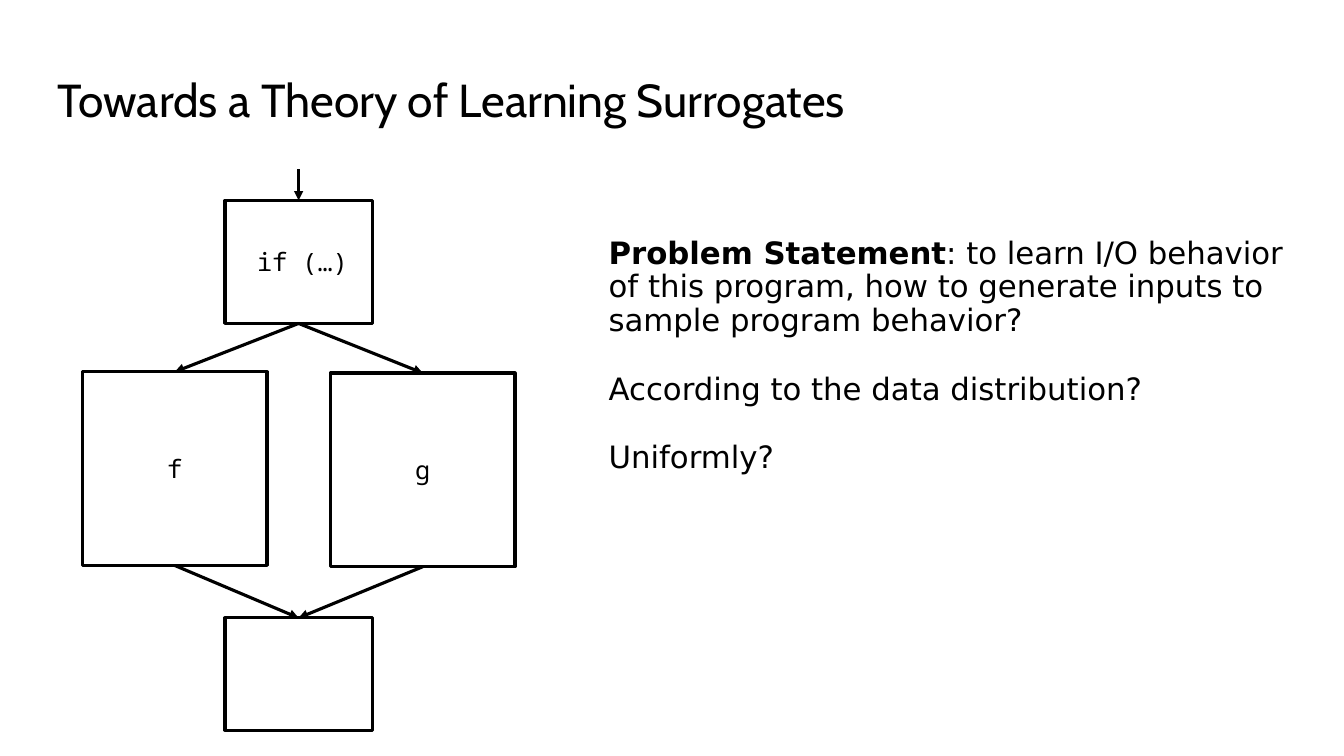
from dataclasses import dataclass

from lxml import etree
from pptx import Presentation
from pptx import util as u
from pptx.dml.color import RGBColor
from pptx.enum import shapes, text
from pptx.oxml import ns
from pptx.shapes.autoshape import Shape
from pptx.shapes.connector import Connector
from pptx.slide import Slide

BLACK = "000000"
LINE_WIDTH = 2.25
TOP, BOTTOM = 0, 2


@dataclass(frozen=True)
class Block:
    key: str
    left: float
    top: float
    width: float
    height: float
    code: str = ""
    align: text.PP_ALIGN = text.PP_ALIGN.CENTER
    indent: float = 0


@dataclass(frozen=True)
class Flow:
    source: str
    target: str


@dataclass(frozen=True)
class Run:
    words: str
    bold: bool = False


BRANCH_SIZE = (4.65, 4.88)
BLOCKS = [
    Block("condition", 5.67, 5.05, 3.71, 3.1, "if (…)", text.PP_ALIGN.LEFT, 0.81),
    Block("f", 2.08, 9.37, *BRANCH_SIZE, "f"),
    Block("g", 8.33, 9.4, *BRANCH_SIZE, "g"),
    Block("merge", 5.67, 15.57, 3.71, 2.83),
]
FLOWS = [
    Flow("condition", "f"),
    Flow("condition", "g"),
    Flow("f", "merge"),
    Flow("g", "merge"),
]
ENTRY_TOP = 4.27
PROBLEM = [
    [
        Run("Problem Statement", bold=True),
        Run(
            ": to learn I/O behavior of this program, how to generate inputs "
            "to sample program behavior?"
        ),
    ],
    [Run("According to the data distribution?")],
    [Run("Uniformly?")],
]


def rgb(value: str) -> RGBColor:
    return RGBColor.from_string(value)


def write_text(
    shape: Shape,
    paragraphs: list[list[Run]],
    *,
    font: str,
    size: float,
    color: str = BLACK,
    align: text.PP_ALIGN = text.PP_ALIGN.LEFT,
    anchor: text.MSO_ANCHOR = text.MSO_ANCHOR.TOP,
    inset_left: float = 0,
    inset_top: float = 0,
    line_points: float | None = None,
    gap_points: float = 0,
) -> None:
    frame = shape.text_frame
    frame.word_wrap = True
    frame.vertical_anchor = anchor
    frame.margin_left, frame.margin_top = u.Cm(inset_left), u.Cm(inset_top)
    frame.margin_right = frame.margin_bottom = 0
    for index, runs in enumerate(paragraphs):
        paragraph = frame.add_paragraph() if index else frame.paragraphs[0]
        paragraph.alignment = align
        if line_points:
            paragraph.line_spacing = u.Pt(line_points)
        if index:
            paragraph.space_before = u.Pt(gap_points)
        for part in runs:
            run = paragraph.add_run()
            run.text = part.words
            run.font.name = font
            run.font.size = u.Pt(size)
            run.font.bold = part.bold
            run.font.color.rgb = rgb(color)


def add_text_area(
    slide: Slide, left: float, top: float, width: float, height: float
) -> Shape:
    return slide.shapes.add_textbox(
        u.Cm(left), u.Cm(top), u.Cm(width), u.Cm(height)
    )


def draw_block(slide: Slide, block: Block) -> Shape:
    box = slide.shapes.add_shape(
        shapes.MSO_SHAPE.RECTANGLE,
        u.Cm(block.left),
        u.Cm(block.top),
        u.Cm(block.width),
        u.Cm(block.height),
    )
    box.shadow.inherit = False
    box.fill.background()
    box.line.color.rgb = rgb(BLACK)
    box.line.width = u.Pt(LINE_WIDTH)
    if block.code:
        write_text(
            box,
            [[Run(block.code)]],
            font="Noto Sans Mono",
            size=18,
            align=block.align,
            anchor=text.MSO_ANCHOR.MIDDLE,
            inset_left=block.indent,
        )
    return box


def draw_arrow(slide: Slide, x: int, y: int, target: Shape) -> Connector:
    arrow = slide.shapes.add_connector(
        shapes.MSO_CONNECTOR.STRAIGHT, x, y, target.left, target.top
    )
    arrow.end_connect(target, TOP)
    arrow.line.color.rgb = rgb(BLACK)
    arrow.line.width = u.Pt(LINE_WIDTH)
    etree.SubElement(
        arrow.line._get_or_add_ln(), ns.qn("a:tailEnd"), type="triangle"
    )
    etree.SubElement(arrow._element.spPr, ns.qn("a:effectLst"))
    return arrow


def main() -> None:
    presentation = Presentation()
    presentation.slide_width = u.Cm(33.87)
    presentation.slide_height = u.Cm(19.05)
    slide = presentation.slides.add_slide(presentation.slide_layouts[6])

    write_text(
        add_text_area(slide, 1.45, 0.91, 30.96, 2.79),
        [[Run("Towards a Theory of Learning Surrogates")]],
        font="Cabin",
        size=33,
        inset_top=0.89,
    )
    write_text(
        add_text_area(slide, 15.34, 5.84, 17.35, 6.05),
        PROBLEM,
        font="DejaVu Sans",
        size=22,
        inset_top=0.13,
        line_points=24,
        gap_points=25,
    )

    boxes = {block.key: draw_block(slide, block) for block in BLOCKS}
    condition = boxes["condition"]
    draw_arrow(
        slide, condition.left + condition.width // 2, u.Cm(ENTRY_TOP), condition
    )
    for flow in FLOWS:
        source = boxes[flow.source]
        branch = draw_arrow(slide, source.left, source.top, boxes[flow.target])
        branch.begin_connect(source, BOTTOM)

    presentation.save("out.pptx")


if __name__ == "__main__":
    main()
